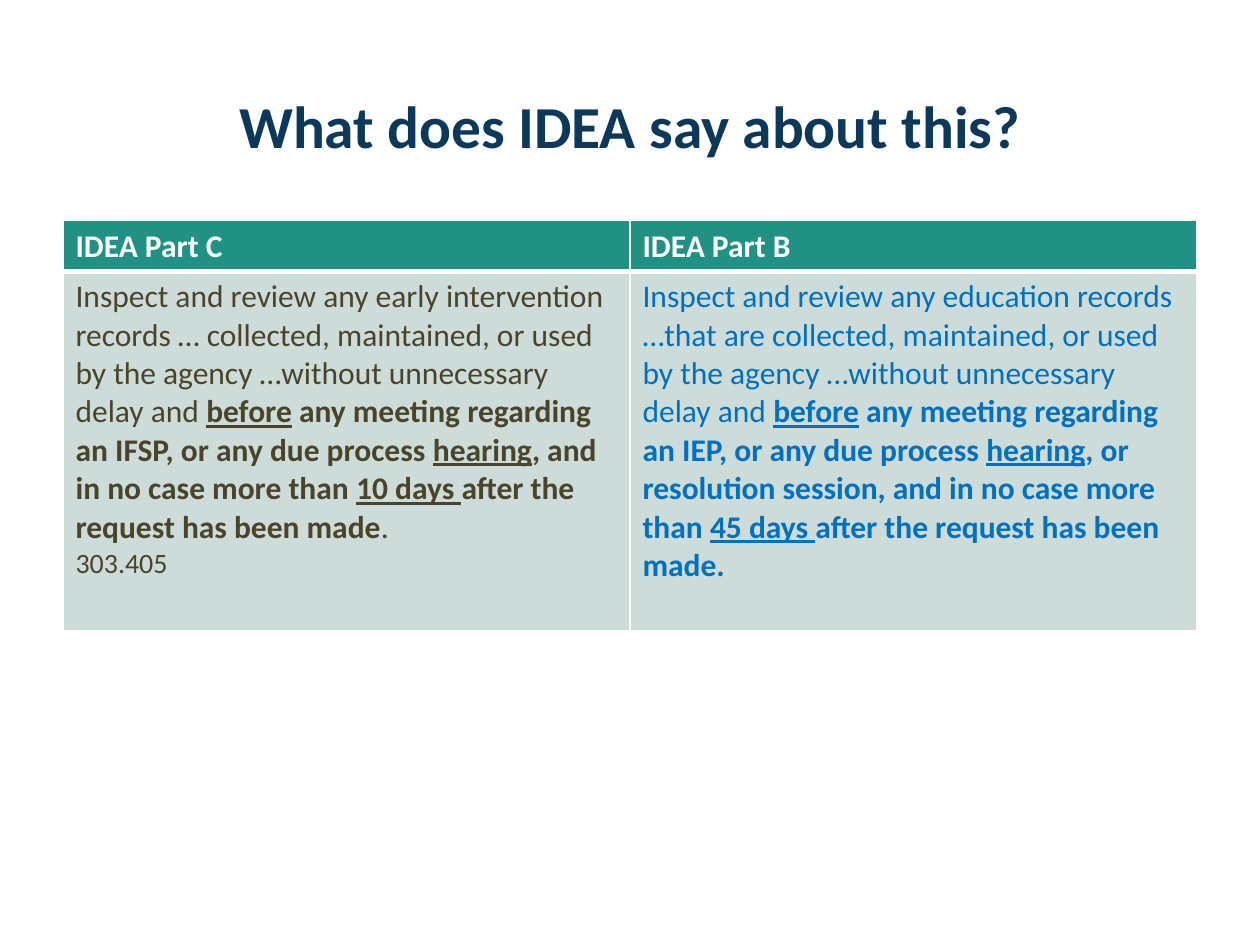
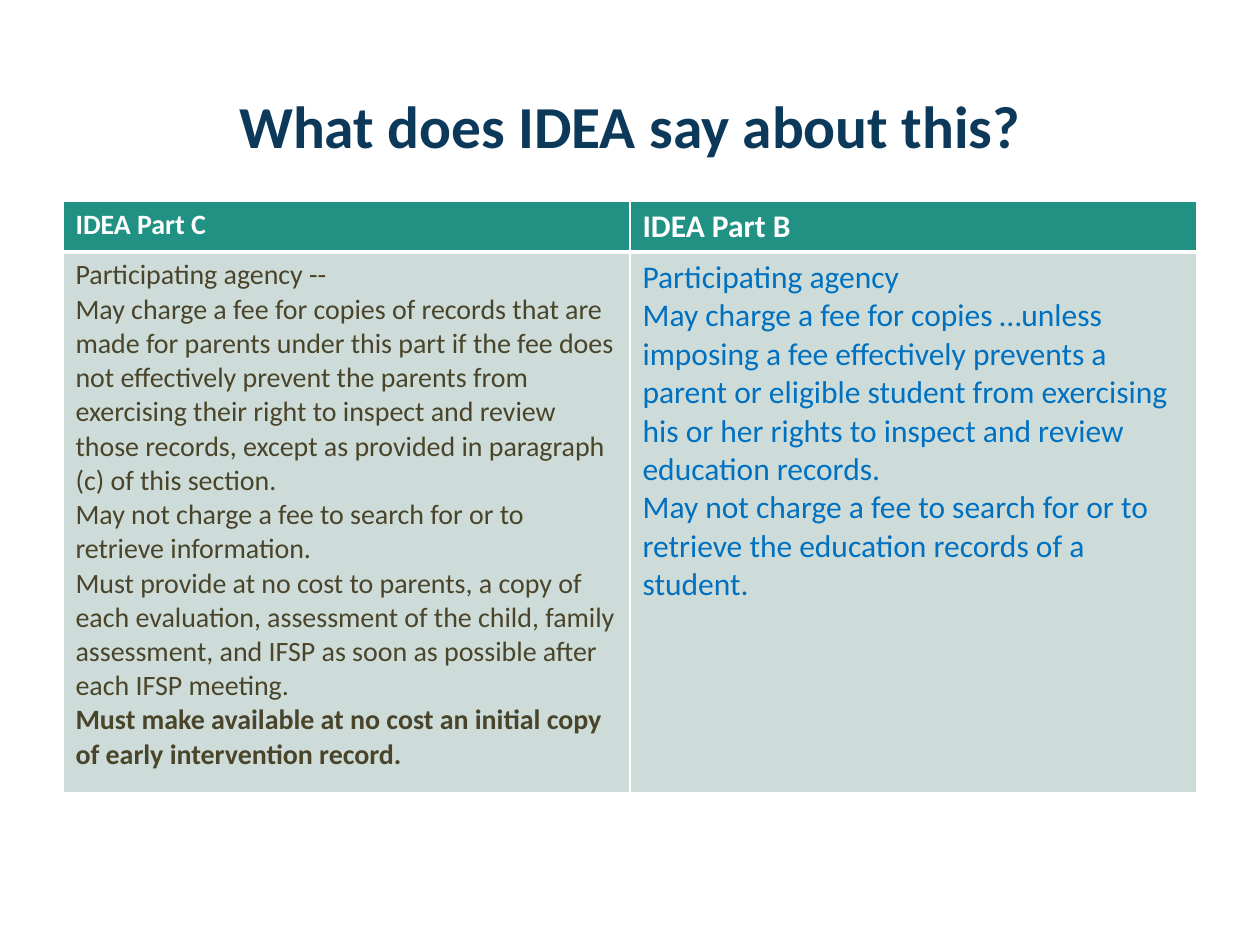
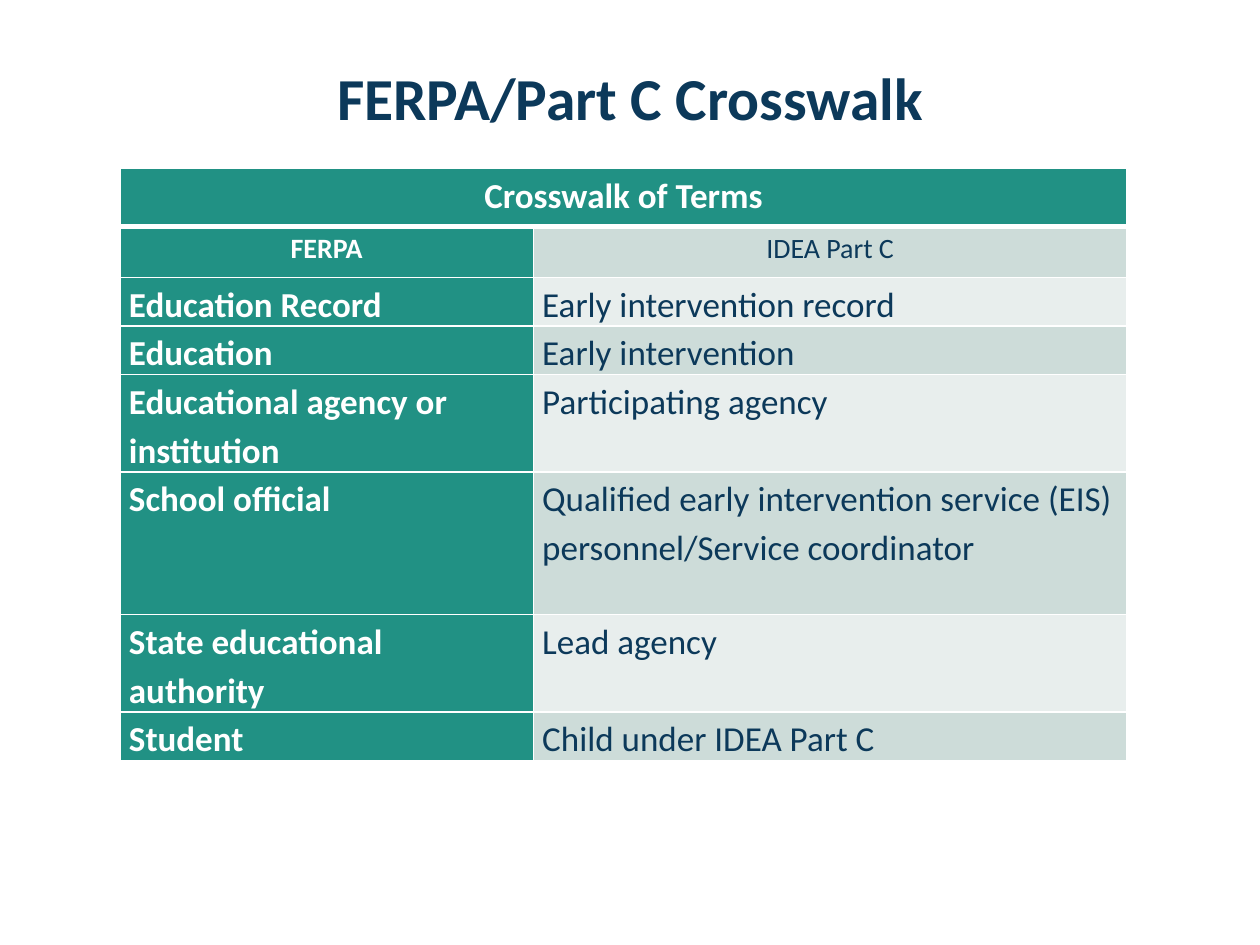
from dataclasses import dataclass
from typing import NamedTuple

from lxml.etree import SubElement
from pptx import Presentation
from pptx.dml.color import RGBColor
from pptx.enum.text import MSO_ANCHOR, PP_ALIGN
from pptx.oxml.ns import qn
from pptx.slide import Slide
from pptx.table import Table, _Cell
from pptx.text.text import _Paragraph
from pptx.util import Cm, Length, Pt


@dataclass(frozen=True)
class Theme:
    font: str = "Calibri"
    navy: str = "0C395A"
    teal: str = "219184"
    olive: str = "4A452A"
    blue: str = "0070C0"
    white: str = "FFFFFF"
    band_dark: str = "CDDCD9"
    band_light: str = "E8EEED"
    title_size: int = 34
    term_size: int = 20
    body_size: int = 18
    small_size: int = 16
    thin_rule: int = 1
    thick_rule: int = 3


THEME = Theme()


class Run(NamedTuple):
    text: str
    bold: bool = False
    underline: bool = False


class Style(NamedTuple):
    size: int
    color: str
    bold: bool = False
    centered: bool = False


class Para(NamedTuple):
    runs: list[Run]
    style: Style


class Column(NamedTuple):
    heading: Para
    body: list[Para]


class Comparison(NamedTuple):
    top: Length
    body_height: Length
    columns: list[Column]


class Term(NamedTuple):
    ferpa: str
    part_c: str
    height: Length
    size: int = THEME.term_size
    centered: bool = False


COMPARISON_TITLE = "What does IDEA say about this?"
CROSSWALK_TITLE = "FERPA/Part C Crosswalk"
CROSSWALK_HEADING = "Crosswalk of Terms"
TITLE_LEFT, TITLE_WIDTH, TITLE_HEIGHT = Cm(1.27), Cm(22.86), Cm(3.1)
COMPARISON_TITLE_TOP, CROSSWALK_TITLE_TOP = Cm(0.25), Cm(-0.3)
HEADING_HEIGHT = Cm(1.02)
LINE_HEIGHT = Cm(0.98)

HEADING = Style(THEME.body_size, THEME.white, bold=True)
SMALL_HEADING = HEADING._replace(size=THEME.small_size)
PART_C = Style(THEME.body_size, THEME.olive)
PART_C_SMALL = PART_C._replace(size=THEME.small_size)
PART_B = Style(THEME.body_size, THEME.blue)


def plain(text: str, style: Style) -> Para:
    return Para([Run(text)], style)


INSPECTION = Comparison(Cm(4.45), Cm(7.24), [
    Column(plain("IDEA Part C", HEADING), [
        Para([
            Run("Inspect and review any early intervention records … collected, maintained, "
                "or used by the agency …without unnecessary delay and "),
            Run("before", True, True),
            Run(" any meeting regarding an IFSP, or any due process ", True),
            Run("hearing", True, True),
            Run(", and in no case more than ", True),
            Run("10 days ", True, True),
            Run("after the request has been made", True),
            Run("."),
        ], PART_C),
        plain("303.405", PART_C_SMALL),
    ]),
    Column(plain("IDEA Part B", HEADING), [
        Para([
            Run("Inspect and review any education records …that are collected, maintained, "
                "or used by the agency …without unnecessary delay and "),
            Run("before", True, True),
            Run(" any meeting regarding an IEP, or any due process ", True),
            Run("hearing", True, True),
            Run(", or resolution session, and in no case more than ", True),
            Run("45 days ", True, True),
            Run("after the request has been made.", True),
        ], PART_B),
    ]),
])

FEES = Comparison(Cm(4.06), Cm(10.9), [
    Column(plain("IDEA Part C", SMALL_HEADING), [
        plain("Participating agency --", PART_C_SMALL),
        plain("May charge a fee for copies of records that are made for parents under this part "
              "if the fee does not effectively prevent the parents from exercising their right "
              "to inspect and review those records, except as provided in paragraph (c) of this "
              "section.", PART_C_SMALL),
        plain("May not charge a fee to search for or to retrieve information.", PART_C_SMALL),
        plain("Must provide at no cost to parents, a copy of each evaluation, assessment of the "
              "child, family assessment, and IFSP as soon as possible after each IFSP meeting.",
              PART_C_SMALL),
        plain("Must make available at no cost an initial copy of early intervention record.",
              PART_C_SMALL._replace(bold=True)),
    ]),
    Column(plain("IDEA Part B", HEADING), [
        plain("Participating agency", PART_B),
        plain("May charge a fee for copies …unless imposing a fee effectively prevents a parent "
              "or eligible student from exercising his or her rights to inspect and review "
              "education records.", PART_B),
        plain("May not charge a fee to search for or to retrieve the education records of a "
              "student.", PART_B),
    ]),
])

TERMS = [
    Term("FERPA", "IDEA Part C", HEADING_HEIGHT, THEME.small_size, centered=True),
    Term("Education Record", "Early intervention record", LINE_HEIGHT),
    Term("Education", "Early intervention", LINE_HEIGHT),
    Term("Educational agency or institution", "Participating agency", 2 * LINE_HEIGHT),
    Term("School official",
         "Qualified early intervention service (EIS) personnel/Service coordinator", Cm(2.88)),
    Term("State educational authority", "Lead agency", 2 * LINE_HEIGHT),
    Term("Student", "Child under IDEA Part C", LINE_HEIGHT),
]


def write_paragraph(paragraph: _Paragraph, para: Para) -> None:
    style = para.style
    if style.centered:
        paragraph.alignment = PP_ALIGN.CENTER
    font = paragraph.font
    font.name, font.size, font.bold = THEME.font, Pt(style.size), style.bold
    font.color.rgb = RGBColor.from_string(style.color)
    for part in para.runs:
        run = paragraph.add_run()
        run.text = part.text
        if part.bold:
            run.font.bold = True
        if part.underline:
            run.font.underline = True


def add_title(slide: Slide, text: str, top: Length) -> None:
    frame = slide.shapes.add_textbox(TITLE_LEFT, top, TITLE_WIDTH, TITLE_HEIGHT).text_frame
    frame.word_wrap = True
    frame.vertical_anchor = MSO_ANCHOR.BOTTOM
    style = Style(THEME.title_size, THEME.navy, bold=True, centered=True)
    write_paragraph(frame.paragraphs[0], plain(text, style))


def add_table(slide: Slide, left: Length, top: Length,
              widths: list[Length], heights: list[Length]) -> Table:
    table = slide.shapes.add_table(len(heights), len(widths), left, top,
                                   sum(widths), sum(heights)).table
    table.first_row = table.horz_banding = False
    for column, width in zip(table.columns, widths):
        column.width = width
    for row, height in zip(table.rows, heights):
        row.height = height
    return table


def set_borders(cell: _Cell, row: int) -> None:
    """Rule the cell thinly, with a thick rule between the first two rows."""
    properties = cell._tc.get_or_add_tcPr()
    thick_side = {0: "lnB", 1: "lnT"}.get(row)
    for position, side in enumerate(("lnL", "lnR", "lnT", "lnB")):
        points = THEME.thick_rule if side == thick_side else THEME.thin_rule
        line = SubElement(properties, qn(f"a:{side}"), w=str(Pt(points)))
        fill = SubElement(line, qn("a:solidFill"))
        SubElement(fill, qn("a:srgbClr"), val=THEME.white)
        properties.insert(position, line)


def fill_cell(table: Table, row: int, column: int, paras: list[Para], fill: str) -> _Cell:
    cell = table.cell(row, column)
    cell.fill.solid()
    cell.fill.fore_color.rgb = RGBColor.from_string(fill)
    set_borders(cell, row)
    frame = cell.text_frame
    for index, para in enumerate(paras):
        write_paragraph(frame.add_paragraph() if index else frame.paragraphs[0], para)
    return cell


def add_comparison(slide: Slide, comparison: Comparison) -> None:
    add_title(slide, COMPARISON_TITLE, COMPARISON_TITLE_TOP)
    table = add_table(slide, TITLE_LEFT, comparison.top, [Cm(11.43)] * 2,
                      [HEADING_HEIGHT, comparison.body_height])
    for index, column in enumerate(comparison.columns):
        fill_cell(table, 0, index, [column.heading], THEME.teal)
        fill_cell(table, 1, index, column.body, THEME.band_dark)


def fill_term_cell(table: Table, row: int, column: int, para: Para, fill: str) -> None:
    cell = fill_cell(table, row, column, [para], fill)
    cell.margin_left = cell.margin_right = Cm(0.18)
    cell.margin_top = cell.margin_bottom = 0
    paragraph = cell.text_frame.paragraphs[0]
    paragraph.line_spacing = 1.15
    paragraph.space_after = Pt(10)


def add_crosswalk(slide: Slide) -> None:
    table = add_table(slide, Cm(2.42), Cm(3.4), [Cm(8.33), Cm(11.97)],
                      [Cm(1.17), *(term.height for term in TERMS)])
    table.cell(0, 0).merge(table.cell(0, 1))
    heading = Style(THEME.term_size, THEME.white, bold=True, centered=True)
    fill_term_cell(table, 0, 0, plain(CROSSWALK_HEADING, heading), THEME.teal)
    set_borders(table.cell(0, 1), 0)
    for row, term in enumerate(TERMS, start=1):
        ferpa = Style(term.size, THEME.white, bold=True, centered=term.centered)
        part_c = Style(term.size, THEME.navy, centered=term.centered)
        band = THEME.band_dark if row % 2 else THEME.band_light
        fill_term_cell(table, row, 0, plain(term.ferpa, ferpa), THEME.teal)
        fill_term_cell(table, row, 1, plain(term.part_c, part_c), band)
    add_title(slide, CROSSWALK_TITLE, CROSSWALK_TITLE_TOP)


def main() -> None:
    deck = Presentation()
    deck.slide_width, deck.slide_height = Cm(25.4), Cm(19.05)
    blank = deck.slide_layouts[6]
    for comparison in (INSPECTION, FEES):
        add_comparison(deck.slides.add_slide(blank), comparison)
    add_crosswalk(deck.slides.add_slide(blank))
    deck.save("out.pptx")


if __name__ == "__main__":
    main()
